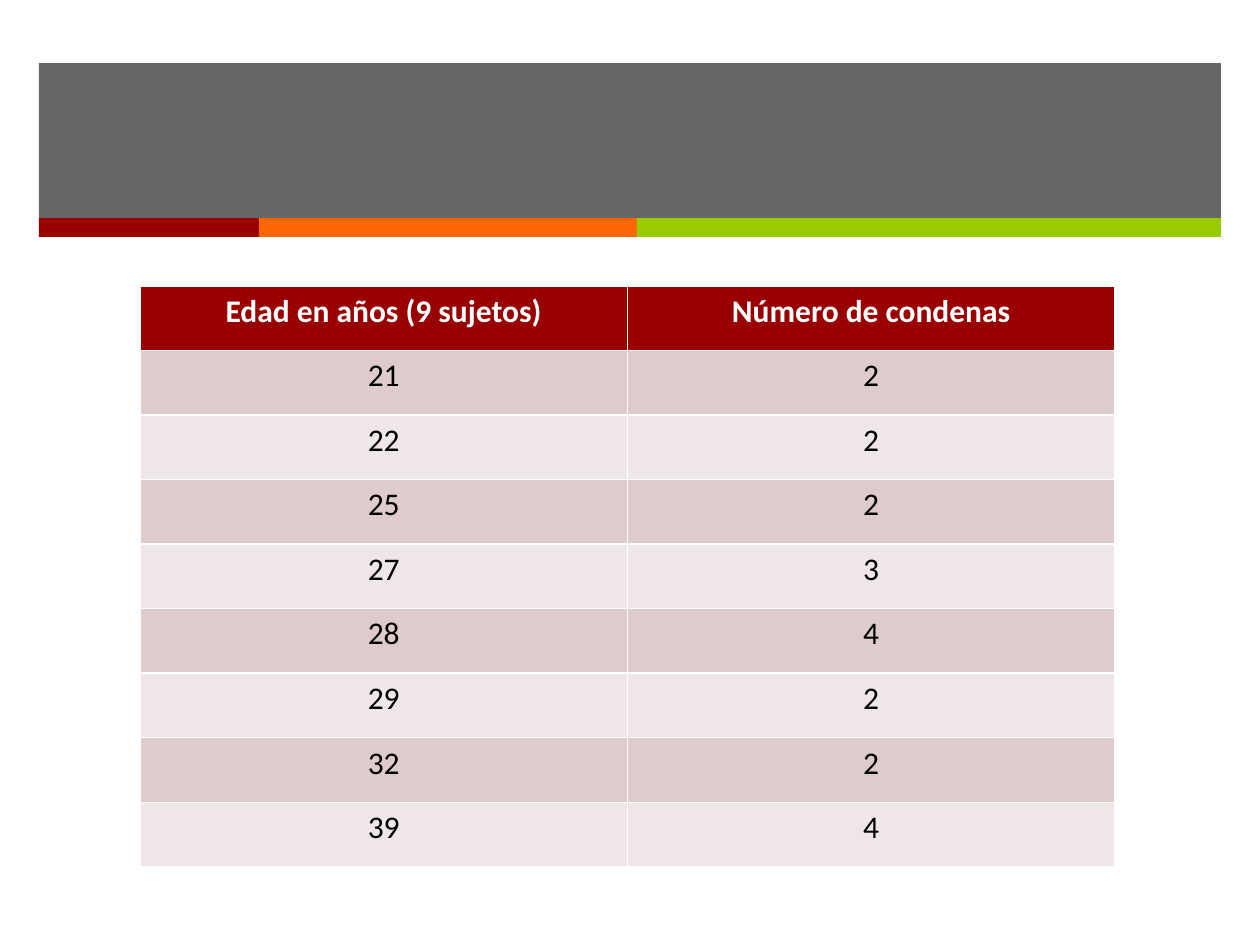
import pptx
import pptx.util
import pptx.dml.color
import pptx.enum.shapes
import pptx.enum.text
import lxml.etree

HEAD = ("Edad en años (9 sujetos)", "Número de condenas")
ROWS = [(21, 2), (22, 2), (25, 2), (27, 3), (28, 4), (29, 2), (32, 2), (39, 4)]
BAND = (39, 63, 1182, 156, "262626")
STRIPES = [(220, "990000"), (378, "FF6600"), (584, "99CC00")]
STRIPE_TOP, STRIPE_HIGH = 218, 19
TABLE = (140, 286, 975, 581)
TINTS = ("EFE7E7", "DECCCC")
NS = "http://schemas.openxmlformats.org/drawingml/2006/main"


def px(n):
    return round(n * 914400 / 126)


def rgb(code):
    return pptx.dml.color.RGBColor.from_string(code)


def paint(part, code):
    part.fill.solid()
    part.fill.fore_color.rgb = rgb(code)


def bar(slide, left, top, wide, high, code):
    rect = pptx.enum.shapes.MSO_SHAPE.RECTANGLE
    shape = slide.shapes.add_shape(rect, px(left), px(top), px(wide), px(high))
    shape.shadow.inherit = False
    shape.line.fill.background()
    paint(shape, code)
    return shape


def fade(shape, share):
    tone = shape.fill._xPr.find(f".//{{{NS}}}srgbClr")
    lxml.etree.SubElement(tone, f"{{{NS}}}alpha").set("val", str(share * 1000))


def grid(slide):
    data = [HEAD] + ROWS
    table = slide.shapes.add_table(len(data), len(HEAD), *map(px, TABLE)).table
    for row, items in enumerate(data):
        table.rows[row].height = px(TABLE[3] / len(data))
        for col, item in enumerate(items):
            cell = table.cell(row, col)
            cell.text = str(item)
            paint(cell, TINTS[row % 2] if row else "990000")
            para = cell.text_frame.paragraphs[0]
            para.alignment = pptx.enum.text.PP_ALIGN.CENTER
            para.font.name = "Calibri"
            para.font.size = pptx.util.Pt(18)
            para.font.bold = row == 0
            para.font.color.rgb = rgb("000000" if row else "FFFFFF")


def main():
    deck = pptx.Presentation()
    deck.slide_width, deck.slide_height = px(1260), px(945)
    slide = deck.slides.add_slide(deck.slide_layouts[6])
    fade(bar(slide, *BAND), 70)
    left = BAND[0]
    for wide, code in STRIPES:
        bar(slide, left, STRIPE_TOP, wide, STRIPE_HIGH, code)
        left += wide
    grid(slide)
    deck.save("out.pptx")


if __name__ == "__main__":
    main()
